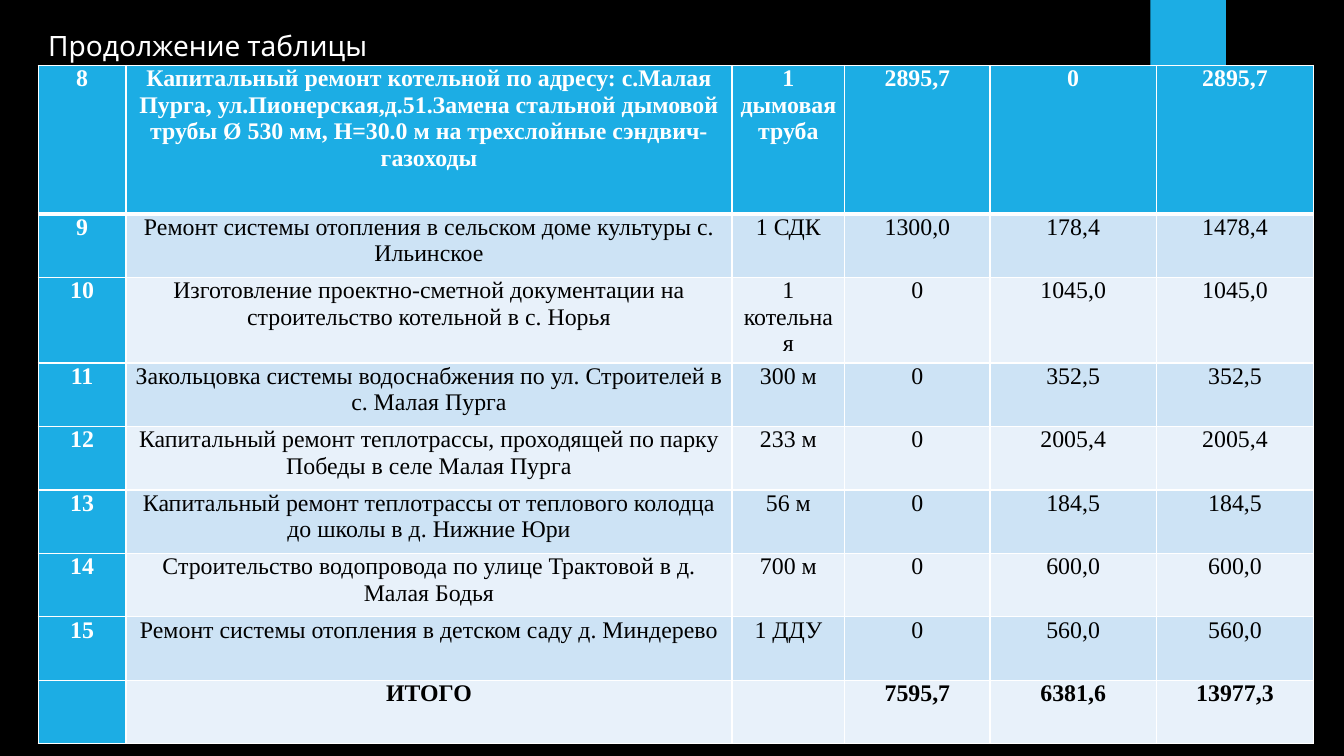
from lxml.etree import SubElement
from pptx import Presentation
from pptx.dml.color import RGBColor
from pptx.enum.shapes import MSO_SHAPE
from pptx.enum.text import PP_ALIGN
from pptx.oxml.ns import qn
from pptx.util import Inches, Pt

BLACK = RGBColor(0x00, 0x00, 0x00)
WHITE = RGBColor(0xFF, 0xFF, 0xFF)
BLUE = RGBColor(0x1C, 0xAD, 0xE4)
DARK = RGBColor(0xCD, 0xE3, 0xF5)
LIGHT = RGBColor(0xE8, 0xF1, 0xFA)

WIDTHS = [0.87, 6.01, 1.12, 1.44, 1.65, 1.56]
HEAD, ROW = 1.47, 0.63
WORKS = [
    ("8", "Капитальный ремонт котельной по адресу: с.Малая Пурга, ул.Пионерская,д.51."
          "Замена стальной дымовой трубы Ø 530 мм, H=30.0 м на трехслойные сэндвич-газоходы",
     "1 дымовая труба", "2895,7", "0", "2895,7"),
    ("9", "Ремонт системы отопления в сельском доме культуры с. Ильинское",
     "1 СДК", "1300,0", "178,4", "1478,4"),
    ("10", "Изготовление проектно-сметной документации на строительство котельной в с. Норья",
     "1 котельная", "0", "1045,0", "1045,0"),
    ("11", "Закольцовка системы водоснабжения по ул. Строителей в с. Малая Пурга",
     "300 м", "0", "352,5", "352,5"),
    ("12", "Капитальный ремонт теплотрассы, проходящей по парку Победы в селе Малая Пурга",
     "233 м", "0", "2005,4", "2005,4"),
    ("13", "Капитальный ремонт теплотрассы от теплового колодца до школы в д. Нижние Юри",
     "56 м", "0", "184,5", "184,5"),
    ("14", "Строительство водопровода по улице Трактовой в д. Малая Бодья",
     "700 м", "0", "600,0", "600,0"),
    ("15", "Ремонт системы отопления в детском саду д. Миндерево",
     "1 ДДУ", "0", "560,0", "560,0"),
    ("", "ИТОГО", "", "7595,7", "6381,6", "13977,3"),
]


class Page:
    title = {"name": "League Spartan", "size": Pt(20)}
    body = {"name": "Times New Roman", "size": Pt(17)}
    pads = {"margin_left": Inches(0.07), "margin_right": Inches(0.07),
            "margin_top": 0, "margin_bottom": 0}

    def __init__(self, slide):
        self.slide = slide
        back = slide.background.fill
        back.solid()
        back.fore_color.rgb = BLACK

    def style(self, item, form):
        for key, value in form.items():
            setattr(item, key, value)

    def label(self, para, text, form, color):
        para.text = text
        self.style(para.font, form)
        para.font.color.rgb = color

    def block(self, box, color):
        shape = self.slide.shapes.add_shape(MSO_SHAPE.RECTANGLE, *map(Inches, box))
        shape.shadow.inherit = False
        shape.fill.solid()
        shape.fill.fore_color.rgb = color
        shape.line.fill.background()

    def text(self, box, text):
        frame = self.slide.shapes.add_textbox(*map(Inches, box)).text_frame
        frame.word_wrap = True
        self.label(frame.paragraphs[0], text, self.title, WHITE)

    def border(self, cell, sides):
        props = cell._tc.get_or_add_tcPr()
        for side, width in sides.items():
            line = SubElement(props, qn("a:ln" + side), w=str(Pt(width)))
            fill = SubElement(line, qn("a:solidFill"))
            SubElement(fill, qn("a:srgbClr"), val=str(WHITE))

    def cell(self, cell, text, fill, color, bold, sides):
        self.border(cell, sides)
        cell.fill.solid()
        cell.fill.fore_color.rgb = fill
        if text:
            self.style(cell, self.pads)
            para = cell.text_frame.paragraphs[0]
            para.alignment = PP_ALIGN.CENTER
            self.label(para, text, {**self.body, "bold": bold}, color)

    def table(self, left, top, data):
        highs = [HEAD] + [ROW] * (len(data) - 1)
        box = left, top, sum(WIDTHS), sum(highs)
        table = self.slide.shapes.add_table(
            len(data), len(WIDTHS), *map(Inches, box)).table
        for col, width in zip(table.columns, WIDTHS):
            col.width = Inches(width)
        for row, high in zip(table.rows, highs):
            row.height = Inches(high)
        for r, line in enumerate(data):
            band = DARK if r % 2 else LIGHT
            # The rule under the first row is thicker
            sides = {"L": 1, "R": 1, "T": 3 if r == 1 else 1, "B": 3 if r == 0 else 1}
            for c, text in enumerate(line):
                head = r == 0 or c == 0
                self.cell(table.cell(r, c), text, BLUE if head else band,
                          WHITE if head else BLACK,
                          head or r == len(data) - 1, sides)


def main():
    deck = Presentation()
    deck.slide_width, deck.slide_height = Inches(13.33), Inches(7.5)
    page = Page(deck.slides.add_slide(deck.slide_layouts[6]))
    # Accent tab and heading
    page.block((11.41, 0, 0.75, 1.25), BLUE)
    page.text((0.38, 0.23, 10.5, 0.42), "Продолжение таблицы")
    # Works and costs
    page.table(0.38, 0.65, WORKS)
    deck.save("out.pptx")


if __name__ == "__main__":
    main()
